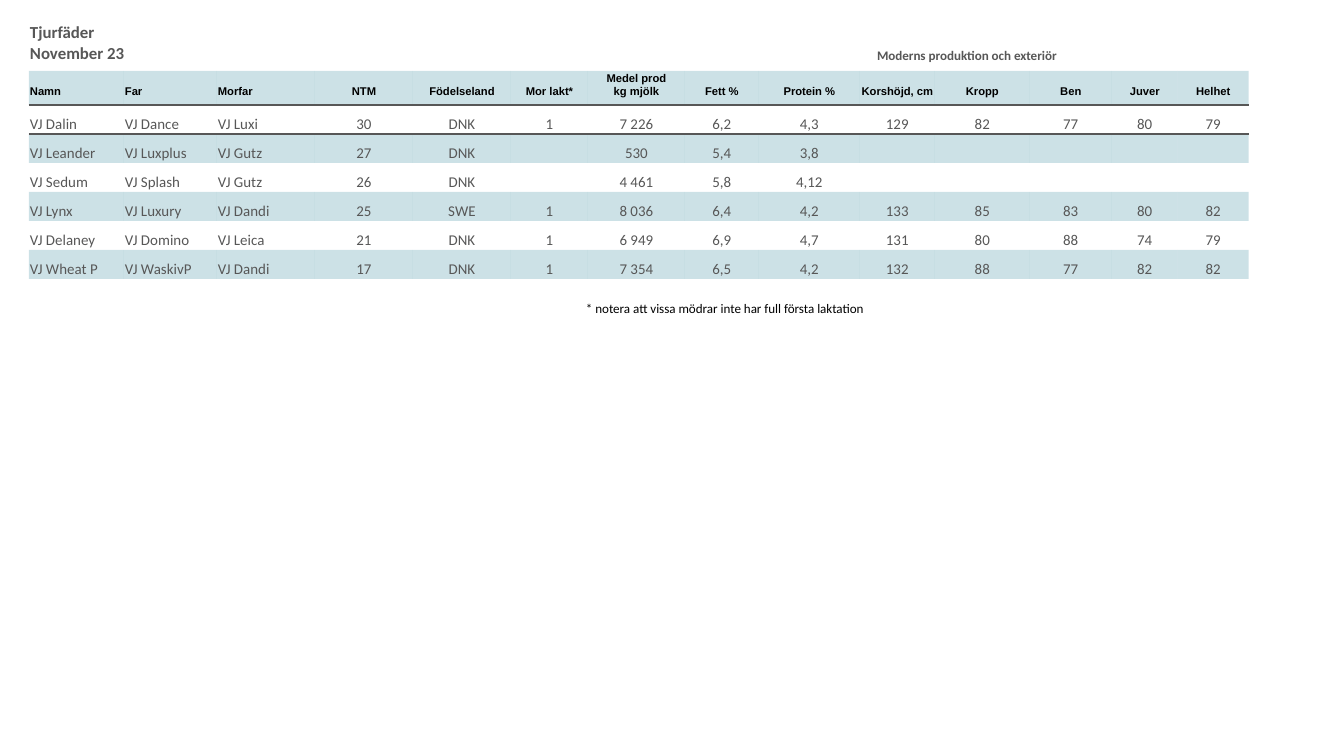
from lxml import etree
from pptx import Presentation
from pptx.dml.color import RGBColor
from pptx.enum.text import MSO_ANCHOR, PP_ALIGN
from pptx.oxml.ns import qn
from pptx.util import Pt

LEFT, CENTER = PP_ALIGN.LEFT, PP_ALIGN.CENTER
BOTTOM = MSO_ANCHOR.BOTTOM
NO_STYLE = "{2D5ABB26-0587-4C30-8999-92F81FD0307C}"
GREY, BLACK, TEAL = "575757", "000000", "006B85"

TITLE = "Tjurfäder\vNovember 23"
GROUP = "Moderns produktion och exteriör"
NOTE = "* notera att vissa mödrar inte har full första laktation"
HEADERS = ["Namn", "Far", "Morfar", "NTM", "Födelseland", "Mor lakt*",
           "Medel prod\vkg mjölk", "Fett %", "Protein %", "Korshöjd, cm",
           "Kropp", "Ben", "Juver", "Helhet"]
BULLS = [
    ["VJ Dalin", "VJ Dance", "VJ Luxi", "30", "DNK", "1", "7 226", "6,2", "4,3",
     "129", "82", "77", "80", "79"],
    ["VJ Leander", "VJ Luxplus", "VJ Gutz", "27", "DNK", "", "530", "5,4", "3,8",
     "", "", "", "", ""],
    ["VJ Sedum", "VJ Splash", "VJ Gutz", "26", "DNK", "", "4 461", "5,8", "4,12",
     "", "", "", "", ""],
    ["VJ Lynx", "VJ Luxury", "VJ Dandi", "25", "SWE", "1", "8 036", "6,4", "4,2",
     "133", "85", "83", "80", "82"],
    ["VJ Delaney", "VJ Domino", "VJ Leica", "21", "DNK", "1", "6 949", "6,9", "4,7",
     "131", "80", "88", "74", "79"],
    ["VJ Wheat P", "VJ WaskivP", "VJ Dandi", "17", "DNK", "1", "7 354", "6,5", "4,2",
     "132", "88", "77", "82", "82"],
]
COLUMNS = [95, 93, 98, 98, 98, 77, 97, 74, 101, 75, 95, 82, 66, 71]
TOP_ROW, HEADER_ROW, ROW = 48, 34, 29
PARENT_COLUMNS = 3
TOP_SPANS = [(0, 1), (5, 6), (7, 13)]

TITLE_FONT = {"name": "Calibri", "size": Pt(9), "bold": True}
GROUP_FONT = {"name": "Calibri", "size": Pt(7), "bold": True}
HEADER_FONT = {"name": "Arial", "size": Pt(6), "bold": True}
BODY_FONT = {"name": "Calibri", "size": Pt(8), "bold": False}
NOTE_FONT = {"name": "Calibri", "size": Pt(7), "bold": False}


def px(length):
    return round(length * 914400 / 134.4)


def rgb(value):
    return RGBColor.from_string(value)


def add_plain_table(slide, left, top, columns, rows):
    frame = slide.shapes.add_table(len(rows), len(columns), px(left), px(top),
                                   px(sum(columns)), px(sum(rows)))
    table = frame.table
    table.first_row = table.horz_banding = False
    next(frame.element.iter(qn("a:tableStyleId"))).text = NO_STYLE
    for column, width in zip(table.columns, columns):
        column.width = px(width)
    for row, height in zip(table.rows, rows):
        row.height = px(height)
    return table


def write_cell(cell, text, font, color=GREY, align=LEFT, bottom=7, shaded=False):
    margins = {"margin_left": 1, "margin_right": 1, "margin_top": 1,
               "margin_bottom": bottom}
    for name, value in margins.items():
        setattr(cell, name, px(value))
    cell.vertical_anchor = BOTTOM
    if shaded:
        cell.fill.solid()
        cell.fill.fore_color.rgb = rgb(TEAL)
        tint = next(cell.fill._xPr.iter(qn("a:srgbClr")))
        etree.SubElement(tint, qn("a:alpha"), val="20000")
    else:
        cell.fill.background()

    cell.text = text
    para = cell.text_frame.paragraphs[0]
    para.alignment = align
    for span in para.runs:
        for name, value in font.items():
            setattr(span.font, name, value)
        span.font.color.rgb = rgb(color)
    if not text:  # the end mark keeps an empty cell from stretching its row
        size = str(int(font["size"].pt * 100))
        etree.SubElement(para._p, qn("a:endParaRPr"), sz=size)


def add_border(cell, edge):
    properties = cell._tc.get_or_add_tcPr()
    line = etree.Element(qn(edge), w=str(Pt(1)))
    fill = etree.SubElement(line, qn("a:solidFill"))
    etree.SubElement(fill, qn("a:srgbClr"), val=GREY)
    properties.insert(0, line)


def fill_bull_table(table):
    for column in range(len(COLUMNS)):
        write_cell(table.cell(0, column), "", GROUP_FONT)
    for first, last in TOP_SPANS:
        table.cell(0, first).merge(table.cell(0, last))
    write_cell(table.cell(0, 0), TITLE, TITLE_FONT)
    write_cell(table.cell(0, 7), GROUP, GROUP_FONT, align=CENTER)

    for column, header in enumerate(HEADERS):
        align = LEFT if column < PARENT_COLUMNS else CENTER
        write_cell(table.cell(1, column), header, HEADER_FONT, BLACK, align,
                   shaded=True)
        for row, bull in enumerate(BULLS):
            write_cell(table.cell(row + 2, column), bull[column], BODY_FONT,
                       align=align, bottom=0, shaded=row % 2 == 1)
        add_border(table.cell(1, column), "a:lnB")
        add_border(table.cell(2, column), "a:lnT")


def main():
    deck = Presentation()
    deck.slide_width, deck.slide_height = px(1344), px(756)
    slide = deck.slides.add_slide(deck.slide_layouts[6])

    rows = [TOP_ROW, HEADER_ROW] + [ROW] * len(BULLS)
    fill_bull_table(add_plain_table(slide, 29, 22, COLUMNS, rows))

    note = add_plain_table(slide, 585, 300, [481], [ROW - 5])
    write_cell(note.cell(0, 0), NOTE, NOTE_FONT, BLACK)
    deck.save("out.pptx")


if __name__ == "__main__":
    main()
